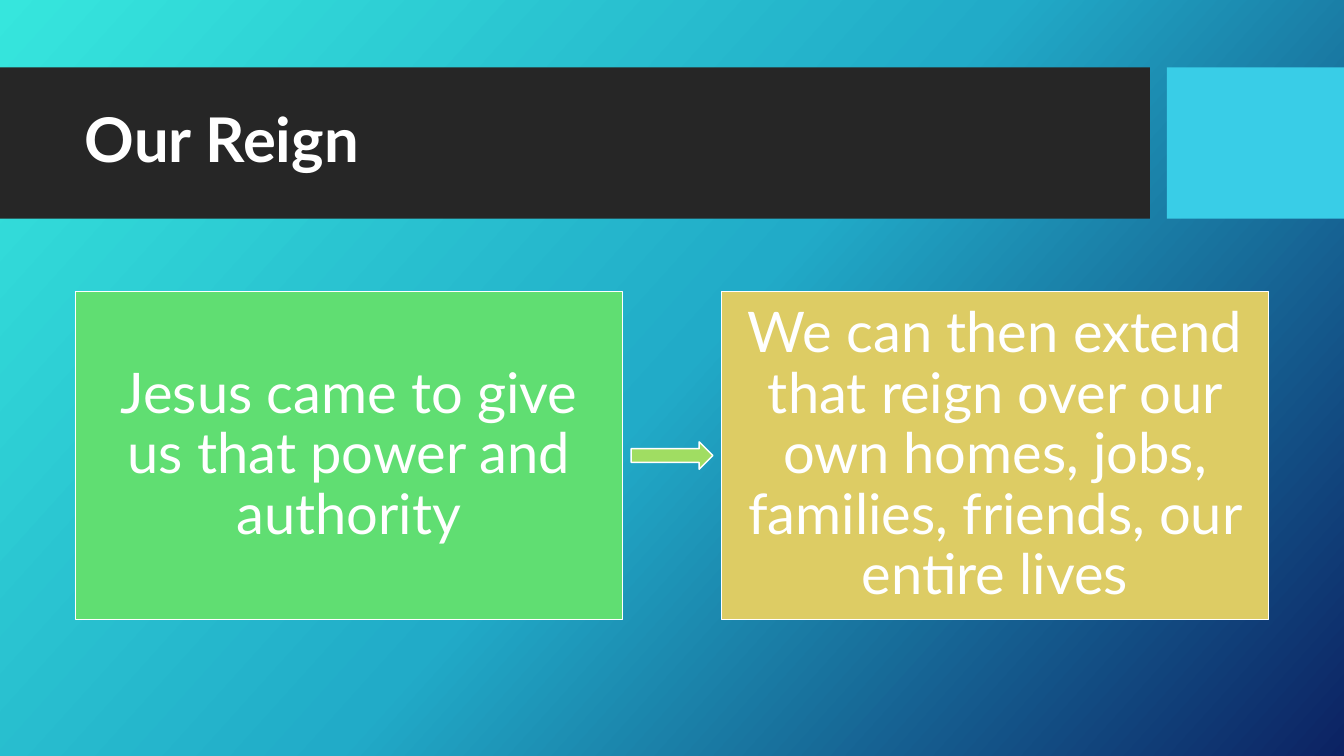
from dataclasses import dataclass
from typing import Any

from lxml.etree import SubElement
from pptx import Presentation
from pptx.dml.color import RGBColor
from pptx.enum.shapes import MSO_SHAPE
from pptx.enum.text import MSO_ANCHOR, MSO_AUTO_SIZE, PP_ALIGN
from pptx.oxml.ns import qn
from pptx.util import Cm, Pt

WHITE = "FFFFFF"
FONT = "Lato"
BACKGROUND_STOPS = [(0, "36E6DD"), (50, "21ABC8"), (100, "0C2263")]
BACKGROUND_ANGLE = 42

# Sizes in centimetres
SLIDE_W, SLIDE_H = 33.87, 19.05
BAND_TOP, BAND_H = 1.7, 3.81
CARD_LEFT, CARD_TOP, CARD_W, CARD_H = 1.9, 7.34, 13.79, 8.28
CARD_GAP = 2.49
ARROW_W, ARROW_H = 2.06, 0.69


@dataclass
class Block:
    left: float
    top: float
    width: float
    height: float
    fill: str
    outlined: bool = False
    preset: MSO_SHAPE = MSO_SHAPE.RECTANGLE
    text: str = ""


def color(value: str) -> RGBColor:
    return RGBColor.from_string(value)


def apply(target: Any, values: dict[str, Any]) -> None:
    for name, value in values.items():
        setattr(target, name, value)


def write(tf: Any, text: str, size: int, bold: bool, frame: dict[str, Any],
          paragraph: dict[str, Any]) -> None:
    apply(tf, {"word_wrap": True, "auto_size": MSO_AUTO_SIZE.NONE,
               "vertical_anchor": MSO_ANCHOR.MIDDLE, **frame})
    p = tf.paragraphs[0]
    apply(p, {"line_spacing": 0.9, **paragraph})
    r = p.add_run()
    r.text = text
    apply(r.font, {"name": FONT, "size": Pt(size), "bold": bold})
    r.font.color.rgb = color(WHITE)


def draw_block(s: Any, block: Block) -> None:
    sp = s.shapes.add_shape(block.preset, Cm(block.left), Cm(block.top),
                            Cm(block.width), Cm(block.height))
    sp.shadow.inherit = False
    sp.fill.solid()
    sp.fill.fore_color.rgb = color(block.fill)
    if block.outlined:
        sp.line.color.rgb = color(WHITE)
        sp.line.width = Pt(1)
    else:
        sp.line.fill.background()
    if block.text:
        margins = {f"margin_{side}": Cm(0.43)
                   for side in ("left", "top", "right", "bottom")}
        write(sp.text_frame, block.text, 40, False, margins,
              {"alignment": PP_ALIGN.CENTER})


def paint_background(s: Any) -> None:
    fill = s.background.fill
    fill.gradient()
    fill.gradient_angle = 360 - BACKGROUND_ANGLE
    stops = s.background._cSld.find(".//" + qn("a:gsLst"))
    for stop in list(stops):
        stops.remove(stop)
    for percent, value in BACKGROUND_STOPS:
        stop = SubElement(stops, qn("a:gs"), pos=str(percent * 1000))
        SubElement(stop, qn("a:srgbClr"), val=value)


def main() -> None:
    prs = Presentation()
    prs.slide_width, prs.slide_height = Cm(SLIDE_W), Cm(SLIDE_H)
    s = prs.slides.add_slide(prs.slide_layouts[5])
    paint_background(s)

    # Title band, two cards and the arrow centred between them
    second_left = CARD_LEFT + CARD_W + CARD_GAP
    blocks = [
        Block(0, BAND_TOP, 28.98, BAND_H, "262626"),
        Block(29.41, BAND_TOP, SLIDE_W - 29.41, BAND_H, "39CDE7"),
        Block(CARD_LEFT, CARD_TOP, CARD_W, CARD_H, "60DE72", True,
              text="Jesus came to give us that power and authority"),
        Block(second_left - (CARD_GAP + ARROW_W) / 2,
              CARD_TOP + (CARD_H - ARROW_H) / 2, ARROW_W, ARROW_H,
              "A0DD62", True, MSO_SHAPE.RIGHT_ARROW),
        Block(second_left, CARD_TOP, CARD_W, CARD_H, "DDCC64", True,
              text="We can then extend that reign over our own homes, jobs, "
                   "families, friends, our entire lives"),
    ]
    for block in blocks:
        draw_block(s, block)

    # Title, brought in front of its band
    title = s.shapes.title
    apply(title, {"left": Cm(1.88), "top": Cm(2.08),
                  "width": Cm(26.7), "height": Cm(3)})
    write(title.text_frame, "Our Reign", 44, True, {},
          {"alignment": PP_ALIGN.LEFT})
    s.shapes._spTree.append(title._element)

    prs.save("out.pptx")


if __name__ == "__main__":
    main()
